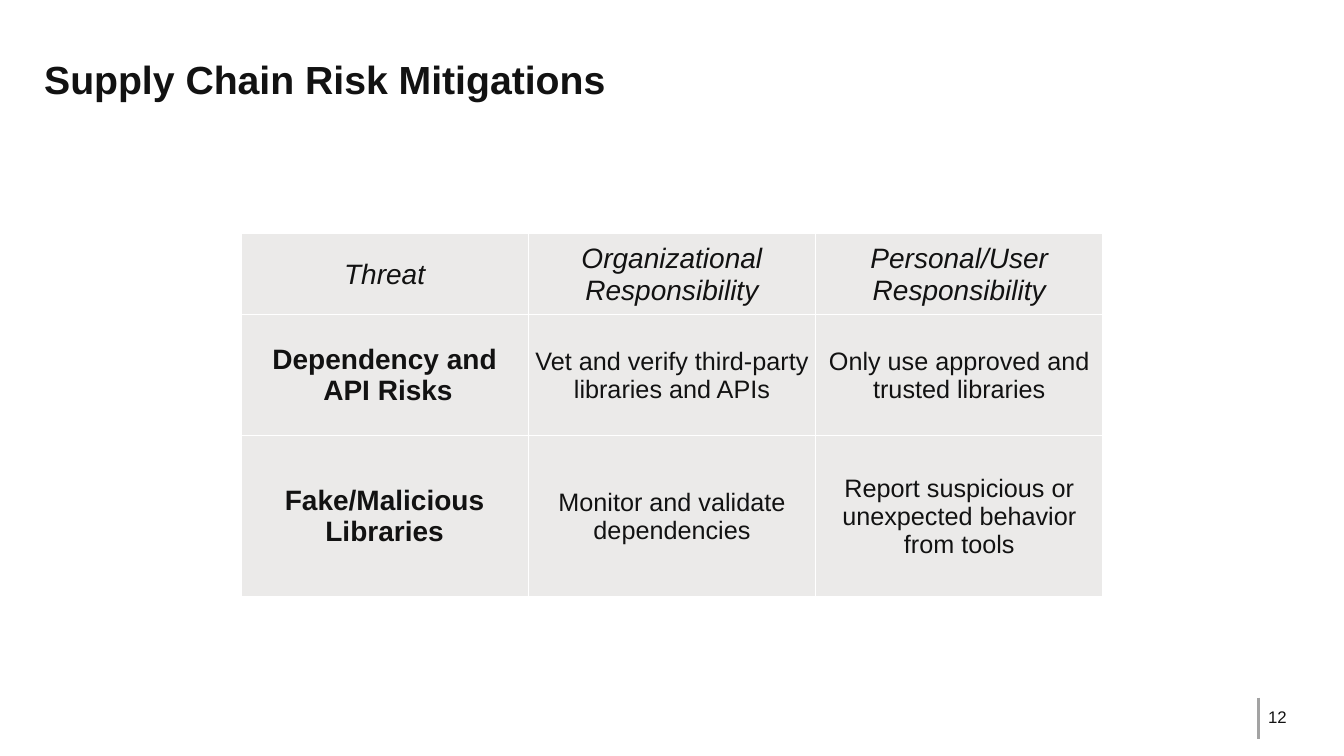
from lxml.etree import SubElement
from pptx import Presentation
from pptx.dml.color import RGBColor
from pptx.enum.shapes import MSO_CONNECTOR
from pptx.enum.text import MSO_ANCHOR, PP_ALIGN
from pptx.oxml.ns import qn
from pptx.util import Inches, Pt

INK = RGBColor(0x12, 0x12, 0x12)
CELL_GREY = RGBColor(0xEB, 0xEA, 0xE9)
RULE_GREY = RGBColor(0xA3, 0xA3, 0xA3)
WHITE = RGBColor(0xFF, 0xFF, 0xFF)


class SlideBuilder:
    """Places elements by percentages of the slide's width and height."""

    font_name = "Arial"

    def __init__(self, deck):
        self.column = deck.slide_width / 100
        self.row = deck.slide_height / 100
        self.slide = deck.slides.add_slide(deck.slide_layouts[6])

    def box(self, left, top, width, height):
        return (round(left * self.column), round(top * self.row),
                round(width * self.column), round(height * self.row))

    def style(self, paragraph, size, bold=False, italic=False):
        font = paragraph.font
        font.name, font.size = self.font_name, Pt(size)
        font.bold, font.italic = bold, italic
        font.color.rgb = INK

    def text(self, wording, area, size, bold=False):
        frame = self.slide.shapes.add_textbox(*self.box(*area)).text_frame
        frame.word_wrap = True
        frame.vertical_anchor = MSO_ANCHOR.MIDDLE
        frame.text = wording
        self.style(frame.paragraphs[0], size, bold)

    def vertical_rule(self, left, top, height):
        x, y, _, length = self.box(left, top, 0, height)
        rule = self.slide.shapes.add_connector(
            MSO_CONNECTOR.STRAIGHT, x, y, x, y + length)
        rule.line.color.rgb = RULE_GREY
        rule.line.width = Pt(2)
        SubElement(rule._element.spPr, qn("a:effectLst"))

    def border(self, cell):
        properties = cell._tc.get_or_add_tcPr()
        for side in ("a:lnL", "a:lnR", "a:lnT", "a:lnB"):
            line = SubElement(properties, qn(side), w=str(Pt(1)))
            fill = SubElement(line, qn("a:solidFill"))
            SubElement(fill, qn("a:srgbClr"), val=str(WHITE))

    def cell(self, cell, wording, **look):
        self.border(cell)
        cell.fill.solid()
        cell.fill.fore_color.rgb = CELL_GREY
        cell.vertical_anchor = MSO_ANCHOR.MIDDLE
        cell.margin_left = cell.margin_right = cell.margin_top = Inches(0.01)
        cell.margin_bottom = 0
        cell.text = wording
        for paragraph in cell.text_frame.paragraphs:
            paragraph.alignment = PP_ALIGN.CENTER
            self.style(paragraph, **look)

    def table(self, rows, area, row_shares):
        area = self.box(*area)
        table = self.slide.shapes.add_table(
            len(rows), len(rows[0]), *area).table
        for row, share in zip(table.rows, row_shares):
            row.height = round(area[3] * share / sum(row_shares))
        for r, row in enumerate(rows):
            for c, wording in enumerate(row):
                if r == 0:
                    look = dict(size=20, italic=True)
                elif c == 0:
                    look = dict(size=20, bold=True)
                else:
                    look = dict(size=18)
                self.cell(table.cell(r, c), wording, **look)


MITIGATIONS = [
    ("Threat", "Organizational Responsibility",
     "Personal/User Responsibility"),
    ("Dependency and\n API Risks",
     "Vet and verify third-party libraries and APIs",
     "Only use approved and trusted libraries"),
    ("Fake/Malicious Libraries", "Monitor and validate dependencies",
     "Report suspicious or unexpected behavior from tools"),
]


def main():
    deck = Presentation()
    deck.slide_width, deck.slide_height = Inches(13.33), Inches(7.5)
    builder = SlideBuilder(deck)

    # Page number with its rule
    builder.text("12", (93.62, 93.07, 3.9, 3.6), size=12)
    builder.vertical_rule(93.62, 92.27, 5.47)

    # Title
    builder.text("Supply Chain Risk Mitigations",
                 (2.55, 4.53, 94.9, 11.87), size=28, bold=True)

    # Threats and who mitigates them
    builder.table(MITIGATIONS, (17.93, 30.93, 64.14, 48), row_shares=(2, 3, 4))

    deck.save("out.pptx")


if __name__ == "__main__":
    main()
